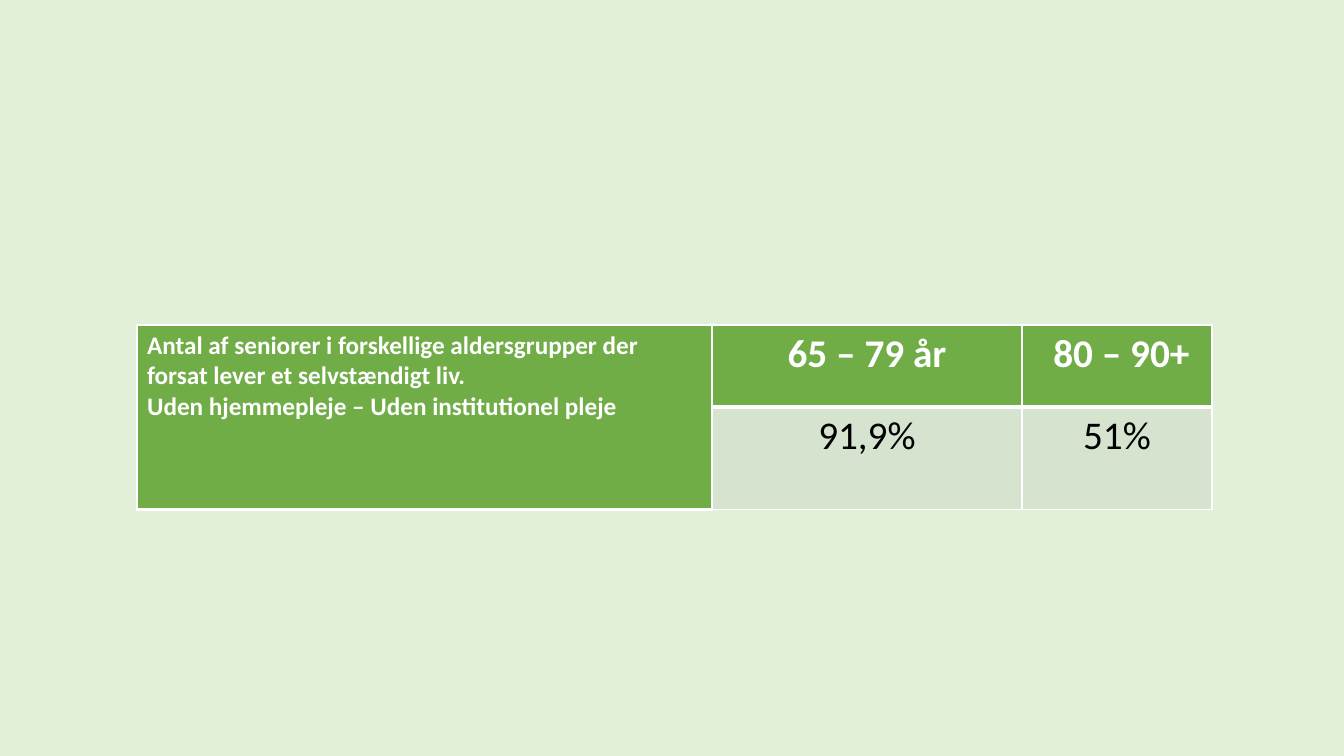
from lxml import etree
from pptx import Presentation
from pptx.dml.color import RGBColor
from pptx.enum.text import PP_ALIGN
from pptx.oxml.ns import qn
from pptx.util import Pt

PX = 914400 / 100.8
COLORS = {
    "background": "E2F0D9",
    "header": "70AD47",
    "value": "D5E3CF",
    "white": "FFFFFF",
    "black": "000000",
}
CAPTION = (
    "Antal af seniorer i forskellige aldersgrupper der forsat lever et selvstændigt liv.\n"
    "Uden hjemmepleje – Uden institutionel pleje"
)
AGE_GROUPS = ["65 – 79 år", " 80 – 90+"]
SHARES = ["91,9%", "51%"]


def px(n):
    """Turn pixels into EMU."""
    return round(n * PX)


def rgb(name):
    """Look up a named colour."""
    return RGBColor.from_string(COLORS[name])


def set_borders(cell, bottom):
    """Draw white cell borders, with the bottom one in the given points."""
    tcPr = cell._tc.get_or_add_tcPr()
    widths = {"lnL": 1, "lnR": 1, "lnT": 1, "lnB": bottom}
    for i, (side, width) in enumerate(widths.items()):
        ln = etree.Element(qn(f"a:{side}"), w=str(Pt(width)))
        fill = etree.SubElement(ln, qn("a:solidFill"))
        etree.SubElement(fill, qn("a:srgbClr"), val=COLORS["white"])
        tcPr.insert(i, ln)


def style_cell(cell, text, size, header, align=PP_ALIGN.CENTER):
    """Fill a cell and write its text as a header or a value."""
    cell.fill.solid()
    cell.fill.fore_color.rgb = rgb("header" if header else "value")
    set_borders(cell, 3 if header else 1)
    cell.text = text
    for p in cell.text_frame.paragraphs:
        p.alignment = align
        p.font.name = "Calibri"
        p.font.size = Pt(size)
        p.font.bold = header
        p.font.color.rgb = rgb("white" if header else "black")


def add_senior_table(slide, left, top, col_widths, row_heights):
    """Add the table of independent seniors by age group."""
    table = slide.shapes.add_table(
        len(row_heights), len(col_widths), px(left), px(top),
        px(sum(col_widths)), px(sum(row_heights)),
    ).table
    for col, width in zip(table.columns, col_widths):
        col.width = px(width)
    for row, height in zip(table.rows, row_heights):
        row.height = px(height)
    for r in range(len(row_heights)):
        style_cell(table.cell(r, 0), "" if r else CAPTION, 18, True, PP_ALIGN.LEFT)
    table.cell(0, 0).merge(table.cell(1, 0))
    for c, (age_group, share) in enumerate(zip(AGE_GROUPS, SHARES), start=1):
        style_cell(table.cell(0, c), age_group, 28, True)
        style_cell(table.cell(1, c), share, 28, False)


def main():
    """Build and save the slide."""
    prs = Presentation()
    prs.slide_width, prs.slide_height = px(1344), px(756)
    slide = prs.slides.add_slide(prs.slide_layouts[6])
    slide.background.fill.solid()
    slide.background.fill.fore_color.rgb = rgb("background")
    add_senior_table(slide, 137, 325, [575, 310, 190], [82, 102])
    prs.save("out.pptx")


if __name__ == "__main__":
    main()
